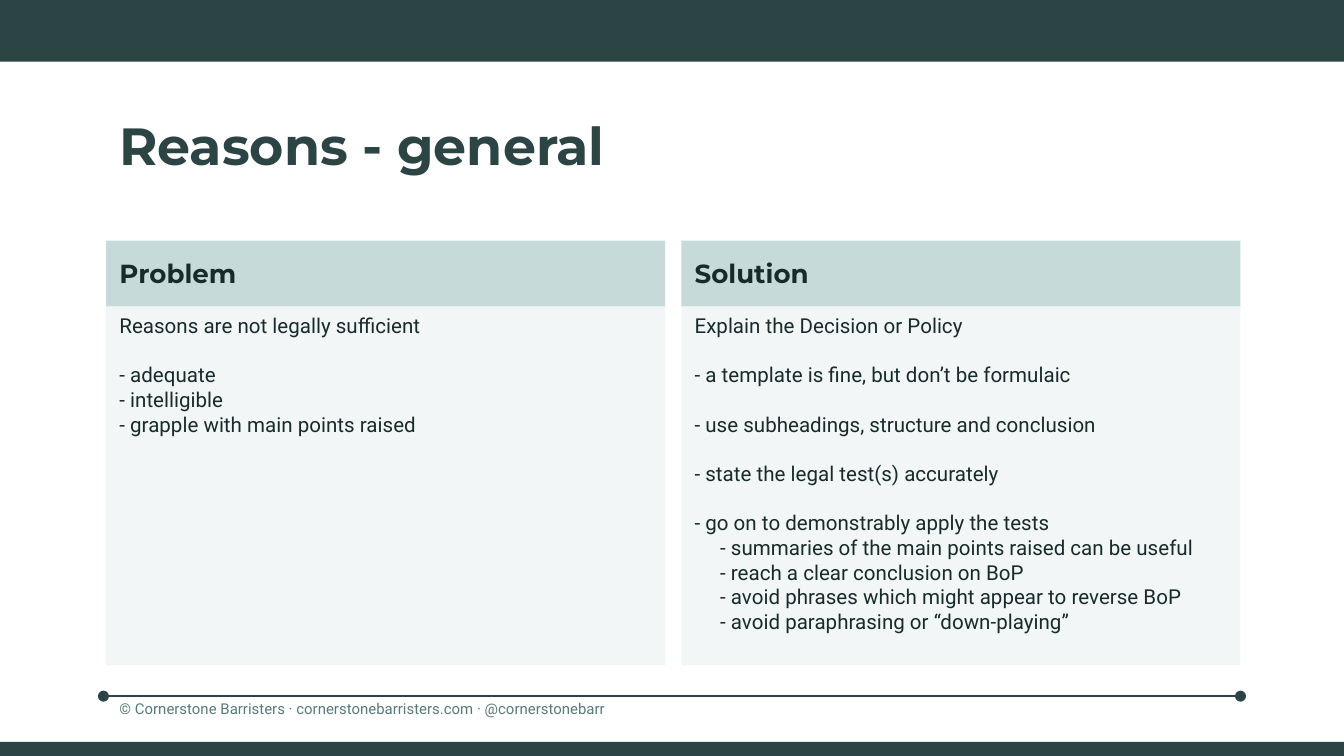
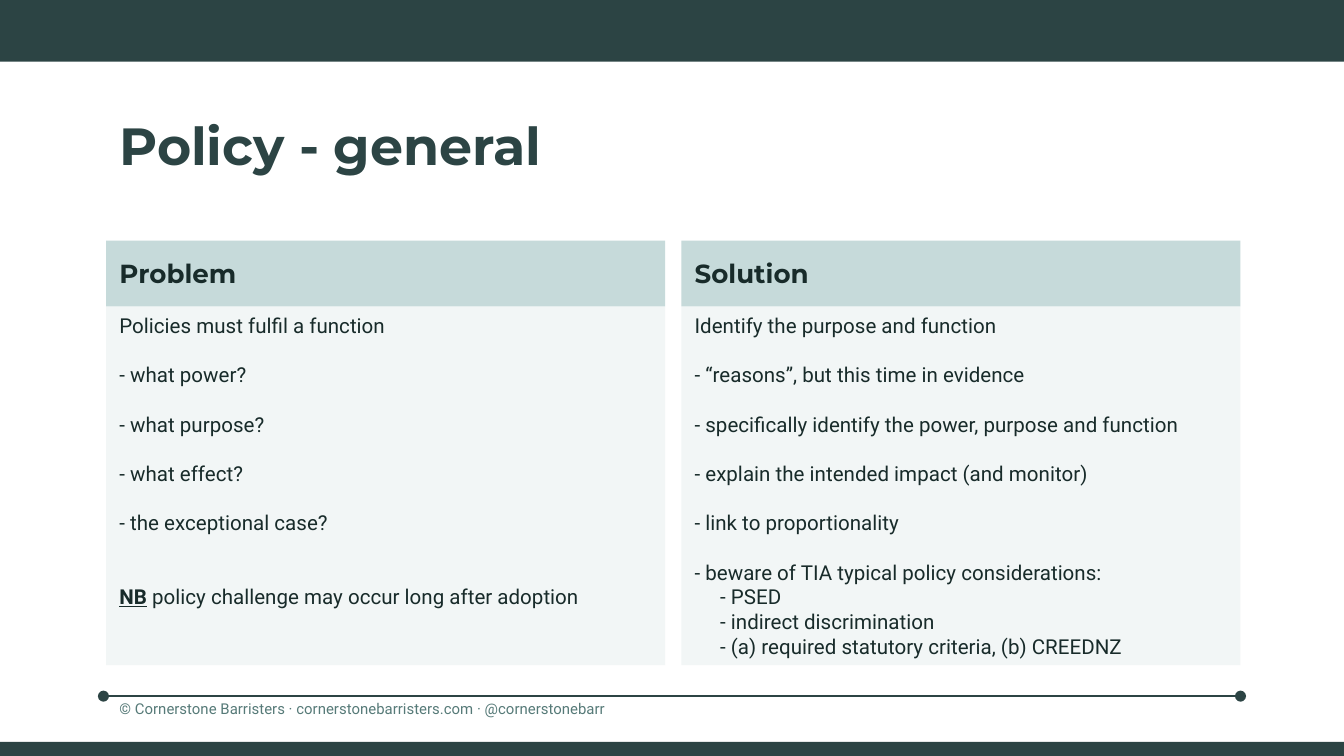
"""Builds two problem-and-solution slides on giving reasons and making policy."""
from lxml import etree
from pptx import Presentation
from pptx.dml.color import RGBColor
from pptx.enum.shapes import MSO_CONNECTOR, MSO_SHAPE
from pptx.enum.text import MSO_ANCHOR, MSO_AUTO_SIZE, PP_ALIGN
from pptx.oxml.ns import qn
from pptx.util import Inches, Pt

RECTANGLE = MSO_SHAPE.RECTANGLE
STRAIGHT = MSO_CONNECTOR.STRAIGHT
TOP, MIDDLE, LEFT = MSO_ANCHOR.TOP, MSO_ANCHOR.MIDDLE, PP_ALIGN.LEFT
GROW_TO_FIT = MSO_AUTO_SIZE.SHAPE_TO_FIT_TEXT

DARK = RGBColor(0x2C, 0x44, 0x44)
INK = RGBColor(0x18, 0x2B, 0x2A)
FOOTER_GREEN = RGBColor(0x56, 0x7A, 0x78)
HEADING_FILL = RGBColor(0xC6, 0xDA, 0xDA)
BODY_FILL = RGBColor(0xF2, 0xF6, 0xF6)

TITLE_STYLE = {"name": "Montserrat", "size": Pt(28), "bold": True}
HEADING_STYLE = {"name": "Montserrat", "size": Pt(14), "bold": True}
BODY_STYLE = {"name": "Roboto", "size": Pt(11), "bold": False}
STRESS_STYLE = {"name": "Roboto", "size": Pt(11), "bold": True, "underline": True}
FOOTER_STYLE = {"name": "Roboto", "size": Pt(8), "bold": False}

FOOTER = "© Cornerstone Barristers · cornerstonebarristers.com · @cornerstonebarr"
MARGIN = 0.79
COLUMN_WIDTH = 4.16
COLUMN_STEP = 4.28
BLANK_LINE = 13.2
SUB_INDENT = 0.19

SLIDES = [
    ("Reasons - general", {
        "Problem": [
            (0, 0, "", "Reasons are not legally sufficient"),
            (1, 0, "", "- adequate"),
            (0, 0, "", "- intelligible"),
            (0, 0, "", "- grapple with main points raised"),
        ],
        "Solution": [
            (0, 0, "", "Explain the Decision or Policy"),
            (1, 0, "", "- a template is fine, but don’t be formulaic"),
            (1, 0, "", "- use subheadings, structure and conclusion"),
            (1, 0, "", "- state the legal test(s) accurately"),
            (1, 0, "", "- go on to demonstrably apply the tests"),
            (0, 1, "", "- summaries of the main points raised can be useful"),
            (0, 1, "", "- reach a clear conclusion on BoP"),
            (0, 1, "", "- avoid phrases which might appear to reverse BoP"),
            (0, 1, "", "- avoid paraphrasing or “down-playing”"),
        ],
    }),
    ("Policy - general", {
        "Problem": [
            (0, 0, "", "Policies must fulfil a function"),
            (1, 0, "", "- what power?"),
            (1, 0, "", "- what purpose?"),
            (1, 0, "", "- what effect?"),
            (1, 0, "", "- the exceptional case?"),
            (2, 0, "NB", " policy challenge may occur long after adoption"),
        ],
        "Solution": [
            (0, 0, "", "Identify the purpose and function"),
            (1, 0, "", "- “reasons”, but this time in evidence"),
            (1, 0, "", "- specifically identify the power, purpose and function"),
            (1, 0, "", "- explain the intended impact (and monitor)"),
            (1, 0, "", "- link to proportionality"),
            (1, 0, "", "- beware of TIA typical policy considerations:"),
            (0, 1, "", "- PSED"),
            (0, 1, "", "- indirect discrimination"),
            (0, 1, "", "- (a) required statutory criteria, (b) CREEDNZ"),
        ],
    }),
]


def add_block(slide, left, top, width, height, fill=None, anchor=TOP):
    place = [Inches(length) for length in (left, top, width, height)]
    if fill:
        block = slide.shapes.add_shape(RECTANGLE, *place)
        block.shadow.inherit = False
        block.fill.solid()
        block.fill.fore_color.rgb = fill
        block.line.fill.background()
    else:
        block = slide.shapes.add_textbox(*place)
    block.text_frame.word_wrap = True
    block.text_frame.vertical_anchor = anchor
    return block.text_frame


def add_words(paragraph, words, style, color):
    paragraph.alignment = LEFT
    run = paragraph.add_run()
    run.text = words
    for attribute, value in style.items():
        setattr(run.font, attribute, value)
    run.font.color.rgb = color


prs = Presentation()
prs.slide_width = Inches(10)
prs.slide_height = prs.slide_width * 9 // 16

for title, columns in SLIDES:
    slide = prs.slides.add_slide(prs.slide_layouts[6])

    rule = slide.shapes.add_connector(
        STRAIGHT, Inches(0.77), Inches(5.18), Inches(9.23), Inches(5.18))
    rule.line.color.rgb = DARK
    rule.line.width = Pt(0.75)
    outline = rule.line._get_or_add_ln()
    for end in ("a:headEnd", "a:tailEnd"):
        etree.SubElement(outline, qn(end), type="oval")
    etree.SubElement(outline.getparent(), qn("a:effectLst"))

    for band_top, band_height in ((0, 0.46), (5.52, 0.11)):
        add_block(slide, 0, band_top, 10.14, band_height, DARK)

    footer = add_block(slide, MARGIN, 5.14, 4.95, 0.31)
    footer.margin_top = footer.margin_bottom = Inches(0.1)
    footer.auto_size = GROW_TO_FIT
    add_words(footer.paragraphs[0], FOOTER, FOOTER_STYLE, FOOTER_GREEN)

    title_frame = add_block(slide, MARGIN, 0.79, 8.44, 0.58)
    add_words(title_frame.paragraphs[0], title, TITLE_STYLE, DARK)

    for column, (heading, lines) in enumerate(columns.items()):
        left = MARGIN + column * COLUMN_STEP
        body = add_block(slide, left, 2.28, COLUMN_WIDTH, 2.67, BODY_FILL)
        for index, (blanks, level, stressed, words) in enumerate(lines):
            paragraph = body.add_paragraph() if index else body.paragraphs[0]
            if blanks:
                paragraph.space_before = Pt(blanks * BLANK_LINE)
            if level:
                indent = Inches(level * SUB_INDENT)
                paragraph._p.get_or_add_pPr().set("marL", str(indent))
            if stressed:
                add_words(paragraph, stressed, STRESS_STYLE, INK)
            add_words(paragraph, words, BODY_STYLE, INK)

        heading_frame = add_block(
            slide, left, 1.79, COLUMN_WIDTH, 0.49, HEADING_FILL, MIDDLE)
        add_words(heading_frame.paragraphs[0], heading, HEADING_STYLE, INK)

prs.save("out.pptx")
